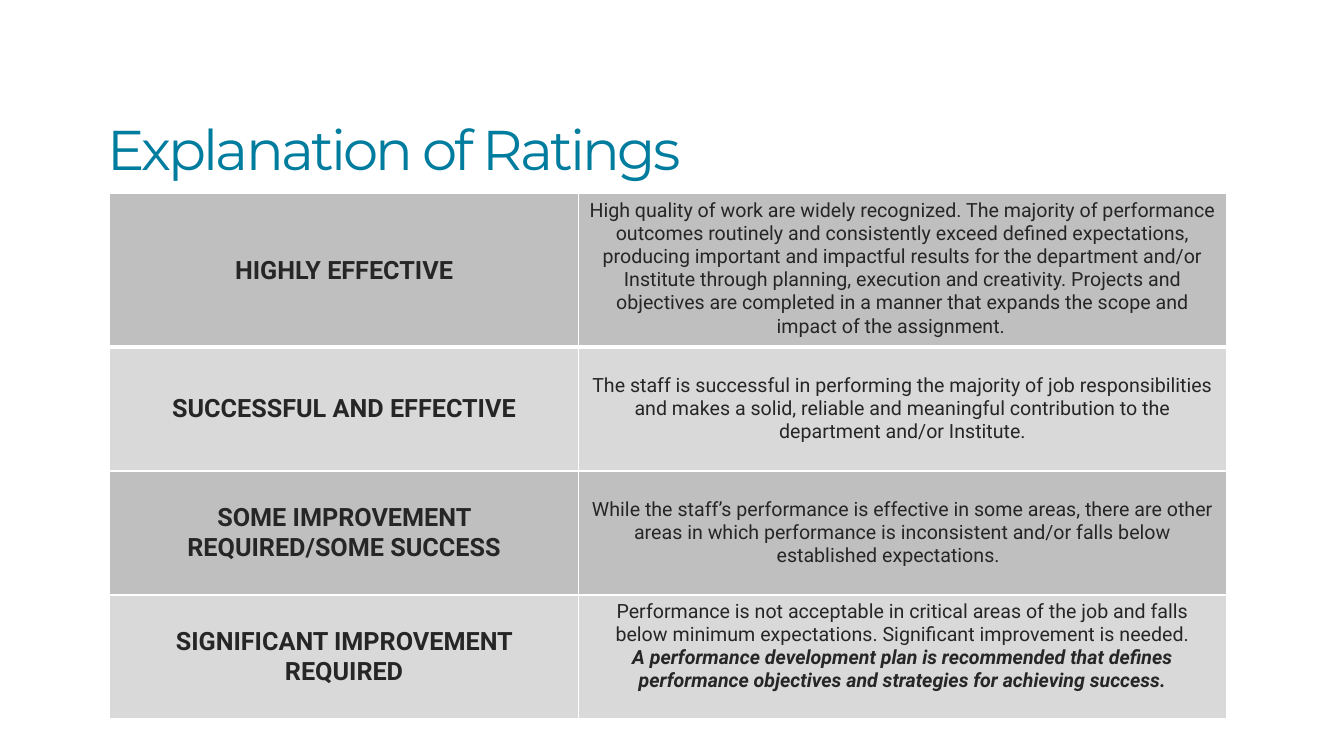
"""Builds the slide that explains the four performance ratings."""
from dataclasses import dataclass

from lxml.etree import SubElement
from pptx import Presentation
from pptx.dml.color import RGBColor as Color
from pptx.enum.text import MSO_ANCHOR as Anchor, PP_ALIGN as Align
from pptx.oxml.ns import qn
from pptx.util import Pt


@dataclass(frozen=True)
class Theme:
    title_color: str = "007D9E"
    text_color: str = "262626"
    border_color: str = "FFFFFF"
    bands: tuple = ("BFBFBF", "D9D9D9")
    title_font: str = "Montserrat"
    body_font: str = "Roboto"
    title_size: int = 40
    rating_size: int = 18
    detail_size: int = 14


theme = Theme()


def add_span(para, text, font, size, color, bold=False, italic=False):
    span = para.add_run()
    span.text = text
    span.font.name = font
    span.font.size = Pt(size)
    span.font.color.rgb = Color.from_string(color)
    span.font.bold = bold
    span.font.italic = italic
    return span


def add_border(cell, side, width):
    line = SubElement(cell._tc.get_or_add_tcPr(), qn(f"a:{side}"), w=str(Pt(width)))
    fill = SubElement(line, qn("a:solidFill"))
    SubElement(fill, qn("a:srgbClr"), val=theme.border_color)


ratings = [
    ("HIGHLY EFFECTIVE", Anchor.TOP, [
        "High quality of work are widely recognized. The majority of performance outcomes "
        "routinely and consistently exceed defined expectations, producing important and "
        "impactful results for the department and/or Institute through planning, execution "
        "and creativity. Projects and objectives are completed in a manner that expands the "
        "scope and impact of the assignment. \t"]),
    ("SUCCESSFUL AND EFFECTIVE", Anchor.MIDDLE, [
        "The staff is successful in performing the majority of job responsibilities and makes "
        "a solid, reliable and meaningful contribution to the department and/or Institute."]),
    ("SOME IMPROVEMENT REQUIRED/SOME SUCCESS", Anchor.MIDDLE, [
        "While the staff’s performance is effective in some areas, there are other areas in "
        "which performance is inconsistent and/or falls below established expectations. \t"]),
    ("SIGNIFICANT IMPROVEMENT REQUIRED", Anchor.TOP, [
        "Performance is not acceptable in critical areas of the job and falls below minimum "
        "expectations. Significant improvement is needed.",
        "A performance development plan is recommended that defines performance objectives "
        "and strategies for achieving success."]),
]

deck = Presentation()
deck.slide_width, deck.slide_height = Pt(960), Pt(540)
page = deck.slides.add_slide(deck.slide_layouts[6])

box = page.shapes.add_textbox(Pt(70), Pt(54), Pt(749.5), Pt(110))
box.text_frame.word_wrap = True
box.text_frame.vertical_anchor = Anchor.MIDDLE
para = box.text_frame.paragraphs[0]
para.line_spacing = 0.9
span = add_span(para, "Explanation of Ratings", theme.title_font, theme.title_size,
                theme.title_color)
span.font._element.set("spc", "-200")

frame = page.shapes.add_table(len(ratings), 2, Pt(78), Pt(138.5), Pt(798), Pt(375))
table = frame.table
table.first_row = table.horz_banding = False
for column, width in zip(table.columns, (335.5, 462.5)):
    column.width = Pt(width)
for row, height in zip(table.rows, (109.5, 88.5, 88.5, 88.5)):
    row.height = Pt(height)

for index, (rating, anchor, details) in enumerate(ratings):
    rating_cell, detail_cell = table.cell(index, 0), table.cell(index, 1)
    rating_cell.vertical_anchor = Anchor.MIDDLE
    detail_cell.vertical_anchor = anchor
    for cell in (rating_cell, detail_cell):
        for side in ("lnL", "lnR", "lnT", "lnB"):
            heavy = (index, side) in ((0, "lnB"), (1, "lnT"))
            add_border(cell, side, 3 if heavy else 1)
        cell.fill.solid()
        cell.fill.fore_color.rgb = Color.from_string(theme.bands[index % 2])

    para = rating_cell.text_frame.paragraphs[0]
    para.alignment = Align.CENTER
    add_span(para, rating, theme.body_font, theme.rating_size, theme.text_color, bold=True)

    for order, detail in enumerate(details):
        text_frame = detail_cell.text_frame
        para = text_frame.add_paragraph() if order else text_frame.paragraphs[0]
        para.alignment = Align.CENTER
        add_span(para, detail, theme.body_font, theme.detail_size, theme.text_color,
                 bold=order > 0, italic=order > 0)

deck.save("out.pptx")
